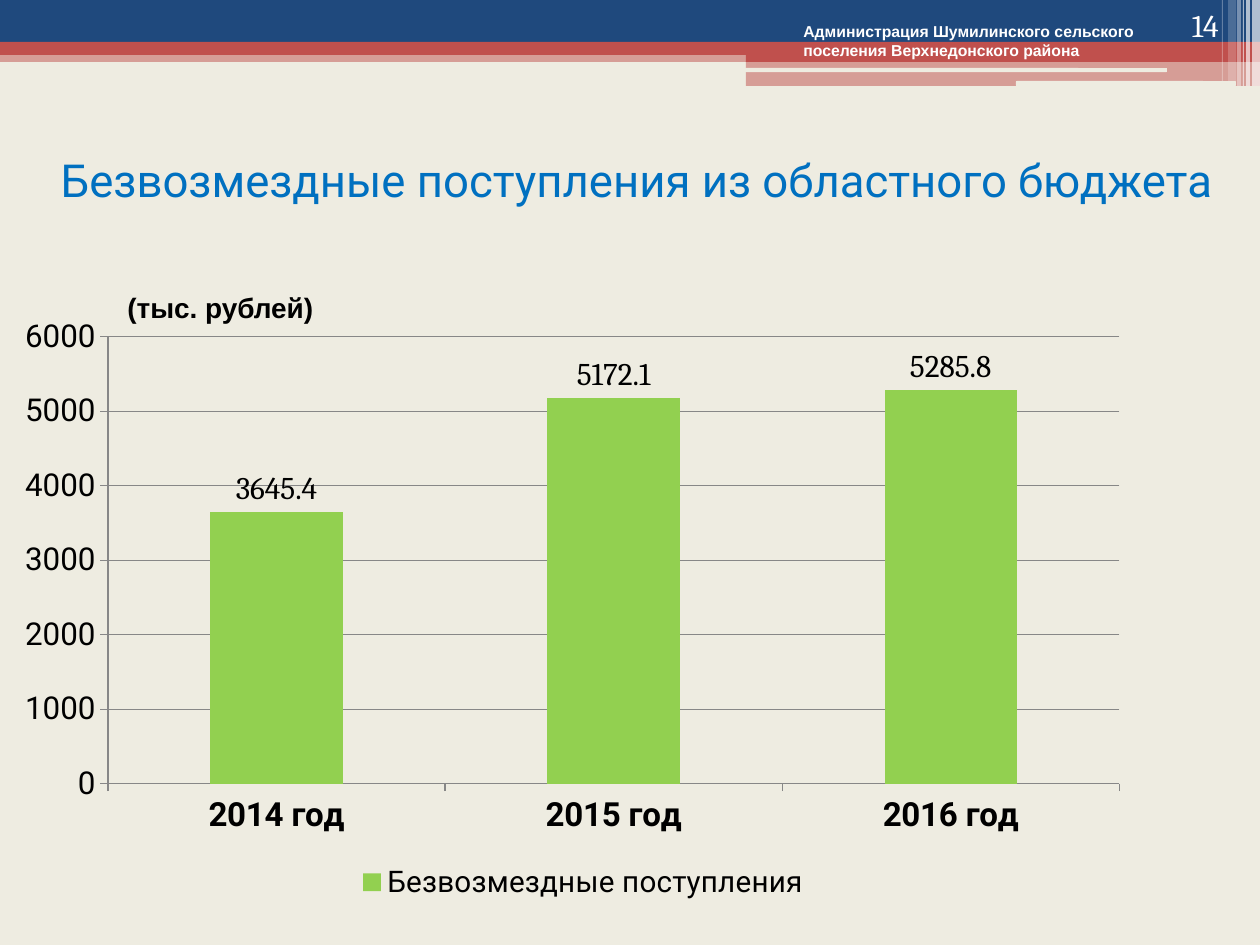
import pptx
import pptx.chart.data
import pptx.dml.color
import pptx.enum.chart
import pptx.enum.shapes
import pptx.enum.text
import pptx.oxml
import pptx.oxml.ns
import pptx.util

PX = 914400 / 126
SLIDE = (1260, 945)
BACKGROUND, NAVY, RED, WHITE, BLACK = "EEECE1", "1F497D", "C0504D", "FFFFFF", "000000"
TITLE_BLUE, GREEN, GRID_GREY = "0070C0", "92D050", "878787"

# (left, top, width, height), colour, opacity in percent
BANDS = [
    ((0, 50, 1260, 12), RED, 50),
    ((0, 0, 1260, 42), NAVY, 100),
    ((0, 42, 1260, 13), RED, 100),
    ((746, 49, 514, 13), RED, 100),
    ((746, 61, 514, 25), RED, 50),
]
ROUNDED_BARS = [
    ((745, 68, 422, 4), BACKGROUND, 100),
    ((1016, 81, 220, 5), BACKGROUND, 100),
]
STRIPES = [
    ((1252, 0, 8, 86), WHITE, 65),
    ((1246, 0, 4, 86), WHITE, 65),
    ((1243, 0, 1, 86), WHITE, 60),
    ((1237, 0, 4, 86), WHITE, 40),
    ((1228, 0, 8, 81), WHITE, 20),
    ((1222, 0, 1, 81), WHITE, 30),
]

ALIGN = pptx.enum.text.PP_ALIGN
ANCHOR = pptx.enum.text.MSO_ANCHOR
# box, wording, (font, size, colour, bold), alignment, anchor
TITLE = ((15, 106, 1245, 147), "Безвозмездные поступления из областного бюджета",
         ("Roboto", 26, TITLE_BLUE, False), ALIGN.CENTER, ANCHOR.MIDDLE)
UNITS = ((115, 284, 228, 47), "(тыс. рублей)",
         ("Arial", 16, BLACK, True), ALIGN.LEFT, ANCHOR.TOP)
ADMINISTRATION = ((791, 16, 392, 50),
                  "Администрация Шумилинского сельского поселения Верхнедонского района",
                  ("Arial", 9, WHITE, True), ALIGN.LEFT, ANCHOR.TOP)
PAGE_NUMBER = ((1126, 0, 105, 50), "14",
               ("Cambria", 18, WHITE, False), ALIGN.RIGHT, ANCHOR.BOTTOM)

CHART_BOX = (25, 310, 1111, 596)
PLOT_LAYOUT = {"x": 0.07, "y": 0.045, "w": 0.915, "h": 0.75}
SERIES = "Безвозмездные поступления"
RECEIPTS = {"2014 год": 3645.4, "2015 год": 5172.1, "2016 год": 5285.8}


def emu(box):
    return [round(length * PX) for length in box]


def rgb(colour):
    return pptx.dml.color.RGBColor.from_string(colour)


def set_font(font, name, size, colour, bold):
    font.name, font.size, font.bold = name, pptx.util.Pt(size), bold
    font.color.rgb = rgb(colour)


def add_bar(slide, preset, box, colour, opacity):
    bar = slide.shapes.add_shape(preset, *emu(box))
    bar.shadow.inherit = False
    bar.line.fill.background()
    bar.fill.solid()
    bar.fill.fore_color.rgb = rgb(colour)
    if opacity < 100:
        fill_colour = bar.element.spPr.find(".//" + pptx.oxml.ns.qn("a:srgbClr"))
        fill_colour.append(pptx.oxml.parse_xml(
            f'<a:alpha {pptx.oxml.ns.nsdecls("a")} val="{opacity * 1000}"/>'))


def add_text(slide, box, wording, font, alignment, anchor):
    frame = slide.shapes.add_textbox(*emu(box)).text_frame
    frame.word_wrap = True
    frame.vertical_anchor = anchor
    paragraph = frame.paragraphs[0]
    paragraph.text = wording
    paragraph.alignment = alignment
    set_font(paragraph.font, *font)


def set_plot_layout(chart):
    """Fix the inner plot area at fractions of the chart box."""
    plot_area = chart.element.find(".//" + pptx.oxml.ns.qn("c:plotArea"))
    for layout in plot_area.findall(pptx.oxml.ns.qn("c:layout")):
        plot_area.remove(layout)
    modes = "".join(f'<c:{side}Mode val="edge"/>' for side in "xy")
    fractions = "".join(f'<c:{side} val="{part}"/>' for side, part in PLOT_LAYOUT.items())
    plot_area.insert(0, pptx.oxml.parse_xml(
        f'<c:layout {pptx.oxml.ns.nsdecls("c")}><c:manualLayout>'
        f'<c:layoutTarget val="inner"/>{modes}{fractions}</c:manualLayout></c:layout>'))


def add_receipts_chart(slide):
    kinds = pptx.enum.chart
    receipts = pptx.chart.data.CategoryChartData()
    receipts.categories = list(RECEIPTS)
    receipts.add_series(SERIES, list(RECEIPTS.values()))
    chart = slide.shapes.add_chart(
        kinds.XL_CHART_TYPE.COLUMN_CLUSTERED, *emu(CHART_BOX), receipts).chart
    set_font(chart.font, "Cambria", 18, BLACK, False)
    chart.has_title = False
    set_plot_layout(chart)

    years, amounts = chart.category_axis, chart.value_axis
    set_font(years.tick_labels.font, "Roboto", 19, BLACK, True)
    set_font(amounts.tick_labels.font, "Roboto", 18, BLACK, False)
    amounts.minimum_scale, amounts.maximum_scale, amounts.major_unit = 0, 6000, 1000
    amounts.has_major_gridlines = True
    for axis in (years, amounts):
        axis.major_tick_mark = kinds.XL_TICK_MARK.OUTSIDE
    for line in (years.format.line, amounts.format.line, amounts.major_gridlines.format.line):
        line.color.rgb = rgb(GRID_GREY)
        line.width = pptx.util.Pt(0.75)

    chart.has_legend = True
    chart.legend.position = kinds.XL_LEGEND_POSITION.BOTTOM
    chart.legend.include_in_layout = False
    set_font(chart.legend.font, "Roboto", 17, BLACK, False)

    columns = chart.plots[0]
    columns.gap_width = 155
    columns.vary_by_categories = False
    columns.series[0].format.fill.solid()
    columns.series[0].format.fill.fore_color.rgb = rgb(GREEN)
    labels = columns.series[0].data_labels
    labels.show_value = True
    labels.position = kinds.XL_LABEL_POSITION.OUTSIDE_END
    set_font(labels.font, "Cambria", 18, BLACK, False)


def main():
    presentation = pptx.Presentation()
    presentation.slide_width, presentation.slide_height = emu(SLIDE)
    slide = presentation.slides.add_slide(presentation.slide_layouts[6])
    slide.background.fill.solid()
    slide.background.fill.fore_color.rgb = rgb(BACKGROUND)

    presets = pptx.enum.shapes.MSO_SHAPE
    for preset, bars in ((presets.RECTANGLE, BANDS),
                         (presets.ROUNDED_RECTANGLE, ROUNDED_BARS),
                         (presets.RECTANGLE, STRIPES)):
        for bar in bars:
            add_bar(slide, preset, *bar)

    for text in (TITLE, UNITS, ADMINISTRATION):
        add_text(slide, *text)
    add_receipts_chart(slide)
    add_text(slide, *PAGE_NUMBER)
    presentation.save("out.pptx")


if __name__ == "__main__":
    main()
